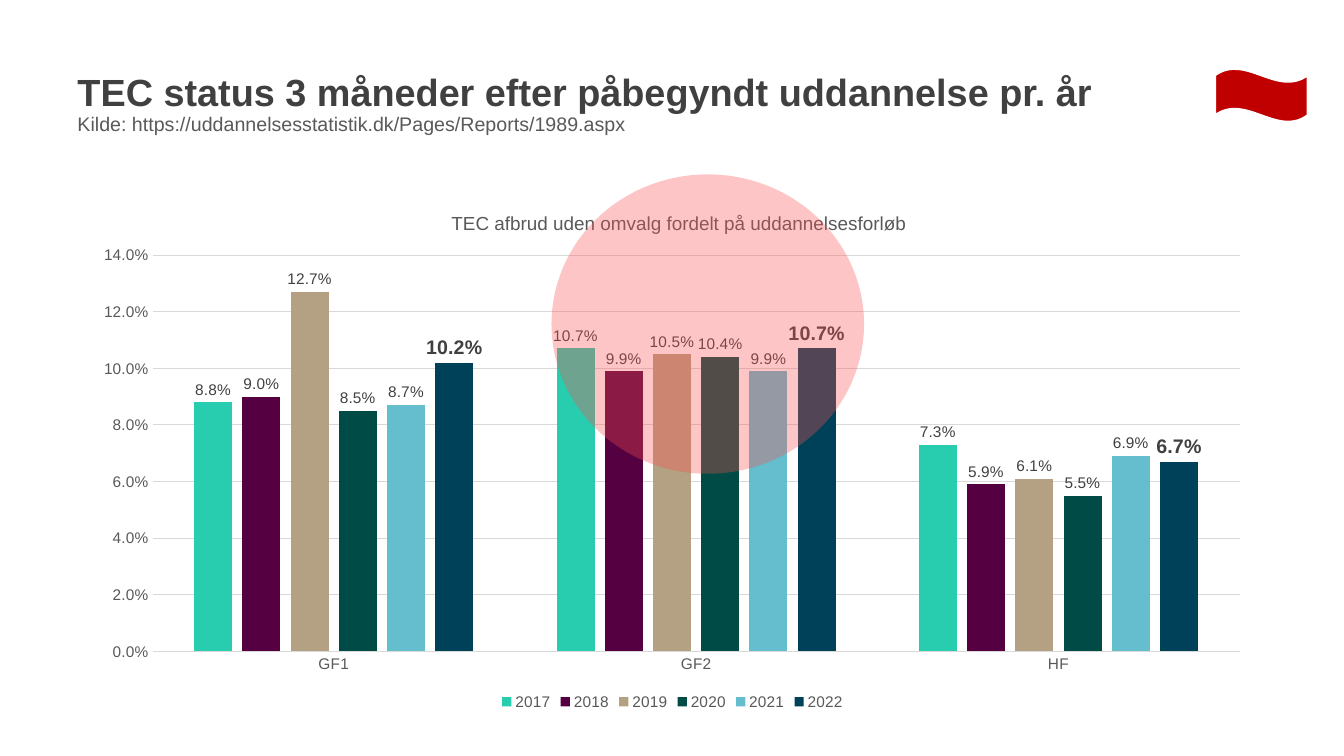
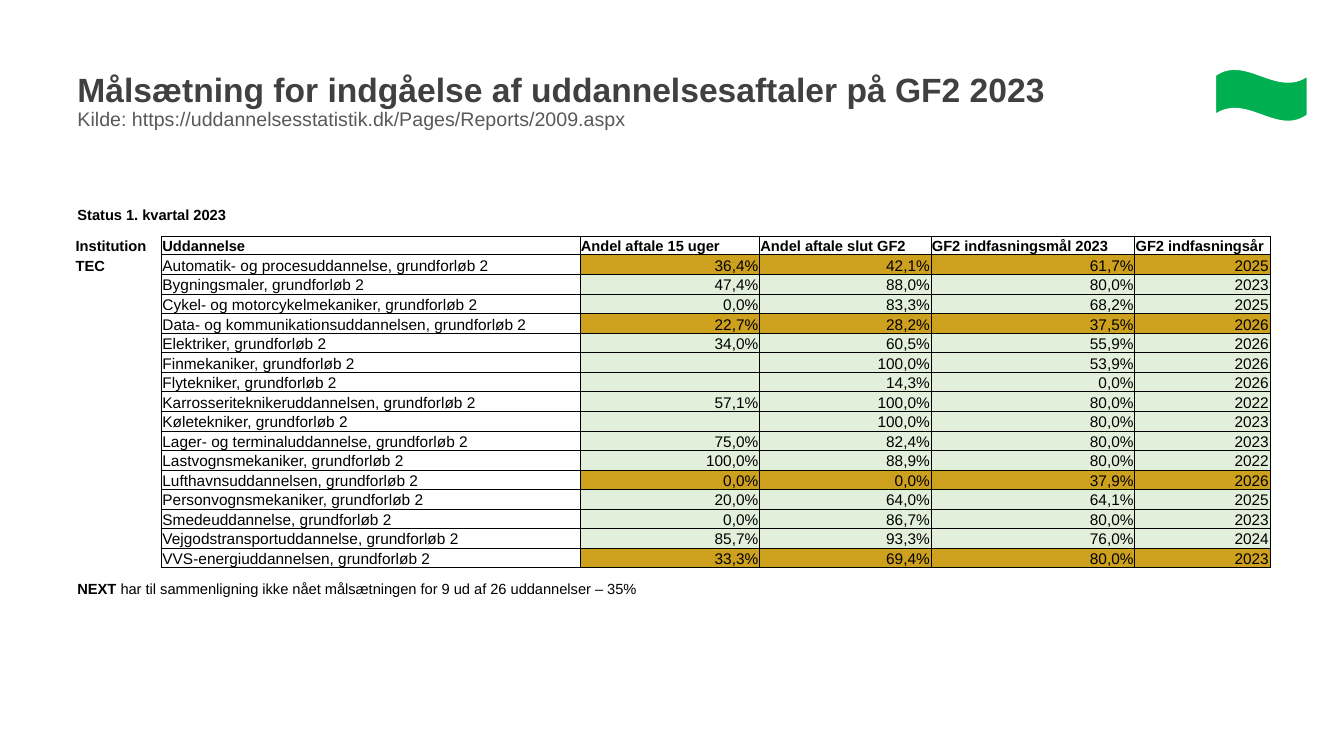
from dataclasses import dataclass

from lxml.etree import SubElement
from pptx import Presentation
from pptx.chart.data import CategoryChartData as ChartData
from pptx.dml.color import RGBColor as Rgb
from pptx.enum.chart import XL_CHART_TYPE as ChartType
from pptx.enum.chart import XL_LABEL_POSITION as LabelPosition
from pptx.enum.chart import XL_LEGEND_POSITION as LegendPosition
from pptx.enum.chart import XL_TICK_MARK as TickMark
from pptx.enum.shapes import MSO_SHAPE as Shape
from pptx.enum.text import MSO_ANCHOR as Anchor
from pptx.enum.text import PP_ALIGN as Align
from pptx.oxml import parse_xml
from pptx.oxml.ns import nsdecls, qn
from pptx.util import Inches, Pt


@dataclass(frozen=True)
class Theme:
    font: str = "Arial"
    heading: str = "404040"
    muted: str = "595959"
    text: str = "000000"
    white: str = "FFFFFF"
    grid: str = "D9D9D9"
    red: str = "C00000"
    green: str = "00B050"
    highlight: str = "FA5050"
    missed: str = "CDA01E"
    reached: str = "E2EFDA"
    years: tuple = ("28CDAF", "550041", "B4A082", "004B46", "64BECD", "00415A")
    source_size: float = 14
    chart_title_size: float = 13.5
    latest_size: float = 14
    body_size: float = 11
    note_size: float = 10.5


THEME = Theme()


@dataclass(frozen=True)
class Box:
    left: float
    top: float
    width: float
    height: float

    def inside(self, left, top, width, height):
        """Box inside this one, given in percent of its size."""
        return Box(self.left + self.width * left / 100,
                   self.top + self.height * top / 100,
                   self.width * width / 100, self.height * height / 100)

    def place(self):
        return [Inches(v) for v in (self.left, self.top, self.width, self.height)]


SLIDE = Box(0, 0, 13.33, 7.5)
TITLE_BOX = SLIDE.inside(5.03, 9.07, 88.9, 15.6)
FLAG_BOX = SLIDE.inside(90.4, 9.07, 6.9, 7.07)
CHART_BOX = SLIDE.inside(6.08, 24.67, 87.92, 69.87)
STATUS_BOX = SLIDE.inside(5.03, 26.53, 89.45, 53.2)

DROPOUT = {
    "2017": (0.088, 0.107, 0.073),
    "2018": (0.09, 0.099, 0.059),
    "2019": (0.127, 0.105, 0.061),
    "2020": (0.085, 0.104, 0.055),
    "2021": (0.087, 0.099, 0.069),
    "2022": (0.102, 0.107, 0.067),
}

HEADERS = ("Institution", "Uddannelse", "Andel aftale 15 uger",
           "Andel aftale slut GF2", "GF2 indfasningsmål 2023", "GF2 indfasningsår")
COLUMN_SHARES = (7.26, 35.02, 15.02, 14.35, 17.05, 11.31)
# Programme, share at 15 weeks, share at end of GF2, goal, phase-in year
PROGRAMMES = (
    ("Automatik- og procesuddannelse", 36.4, 42.1, 61.7, 2025),
    ("Bygningsmaler", 47.4, 88.0, 80.0, 2023),
    ("Cykel- og motorcykelmekaniker", 0.0, 83.3, 68.2, 2025),
    ("Data- og kommunikationsuddannelsen", 22.7, 28.2, 37.5, 2026),
    ("Elektriker", 34.0, 60.5, 55.9, 2026),
    ("Finmekaniker", None, 100.0, 53.9, 2026),
    ("Flytekniker", None, 14.3, 0.0, 2026),
    ("Karrosseriteknikeruddannelsen", 57.1, 100.0, 80.0, 2022),
    ("Køletekniker", None, 100.0, 80.0, 2023),
    ("Lager- og terminaluddannelse", 75.0, 82.4, 80.0, 2023),
    ("Lastvognsmekaniker", 100.0, 88.9, 80.0, 2022),
    ("Lufthavnsuddannelsen", 0.0, 0.0, 37.9, 2026),
    ("Personvognsmekaniker", 20.0, 64.0, 64.1, 2025),
    ("Smedeuddannelse", 0.0, 86.7, 80.0, 2023),
    ("Vejgodstransportuddannelse", 85.7, 93.3, 76.0, 2024),
    ("VVS-energiuddannelsen", 33.3, 69.4, 80.0, 2023),
)
GOAL_TOLERANCE = 0.5  # percentage points
NO_TABLE_STYLE = "{2D5ABB26-0587-4C30-8999-92F81FD0307C}"


def style(font, size, color, bold=False):
    font.name, font.size, font.bold = THEME.font, Pt(size), bold
    font.color.rgb = Rgb.from_string(color)


def add_span(para, text, size, color, bold=False):
    span = para.add_run()
    span.text = text
    style(span.font, size, color, bold)


def add_text(page, box):
    frame = page.shapes.add_textbox(*box.place()).text_frame
    frame.word_wrap = True
    return frame.paragraphs[0]


def add_figure(page, kind, box, color):
    figure = page.shapes.add_shape(kind, *box.place())
    figure.shadow.inherit = False
    figure.fill.solid()
    figure.fill.fore_color.rgb = Rgb.from_string(color)
    figure.line.fill.background()
    return figure


def add_header(page, title, size, source, flag_color):
    # Title with its source line
    para = add_text(page, TITLE_BOX)
    para.line_spacing = 0.9
    add_span(para, title, size, THEME.heading, True)
    para.add_line_break()
    add_span(para, source, THEME.source_size, THEME.muted)
    # Status flag
    flag = add_figure(page, Shape.WAVE, FLAG_BOX, flag_color)
    flag.line.color.rgb = Rgb.from_string(THEME.white)
    flag.line.width = Pt(1.5)


def set_layout(parent, index, inner=False, **shares):
    """Fix the place of a chart element, in shares of the chart."""
    old = parent.find(qn("c:layout"))
    if old is not None:
        parent.remove(old)
    layout = parse_xml(f"<c:layout {nsdecls('c')}><c:manualLayout/></c:layout>")
    values = {"layoutTarget": "inner"} if inner else {}
    values.update(xMode="edge", yMode="edge", **shares)
    for name, value in values.items():
        SubElement(layout[0], qn(f"c:{name}")).set("val", str(value))
    parent.insert(index, layout)


def style_axis(axis):
    axis.major_tick_mark = axis.minor_tick_mark = TickMark.NONE
    style(axis.tick_labels.font, THEME.body_size, THEME.muted)


def style_line(line):
    line.color.rgb = Rgb.from_string(THEME.grid)
    line.width = Pt(0.75)


def add_dropout_chart(page, box):
    data = ChartData(number_format="0.0%")
    data.categories = ("GF1", "GF2", "HF")
    for year, values in DROPOUT.items():
        data.add_series(year, values)
    chart = page.shapes.add_chart(
        ChartType.COLUMN_CLUSTERED, *box.place(), data).chart
    style(chart.font, THEME.body_size, THEME.text)

    # Chart title and legend
    para = chart.chart_title.text_frame.paragraphs[0]
    add_span(para, "TEC afbrud uden omvalg fordelt på uddannelsesforløb",
             THEME.chart_title_size, THEME.muted)
    chart_xml = chart.element.find(qn("c:chart"))
    set_layout(chart_xml.find(qn("c:title")), 1, x=0.31, y=0.04)
    set_layout(chart_xml.find(qn("c:plotArea")), 0, inner=True,
               x=0.06, y=0.13, w=0.92, h=0.75)
    chart.has_legend = True
    chart.legend.position = LegendPosition.BOTTOM
    chart.legend.include_in_layout = False
    style(chart.legend.font, THEME.body_size, THEME.muted)

    # Axes
    style_axis(chart.category_axis)
    style_line(chart.category_axis.format.line)
    scale = chart.value_axis
    style_axis(scale)
    scale.minimum_scale, scale.maximum_scale, scale.major_unit = 0, 0.14, 0.02
    scale.tick_labels.number_format = "0.0%"
    scale.tick_labels.number_format_is_linked = False
    scale.format.line.fill.background()
    style_line(scale.major_gridlines.format.line)

    # Columns, with the latest year stressed
    plot = chart.plots[0]
    plot.gap_width, plot.overlap, plot.vary_by_categories = 219, -27, False
    for series, color in zip(plot.series, THEME.years):
        series.format.fill.solid()
        series.format.fill.fore_color.rgb = Rgb.from_string(color)
        latest = color == THEME.years[-1]
        labels = series.data_labels
        labels.show_value = True
        labels.position = LabelPosition.OUTSIDE_END
        labels.number_format = "0.0%"
        labels.number_format_is_linked = False
        style(labels.font, THEME.latest_size if latest else THEME.body_size,
              THEME.heading, latest)

    # Translucent highlight over GF2
    circle = add_figure(page, Shape.OVAL, box.inside(39.76, -2.29, 26.45, 56.68),
                        THEME.highlight)
    color = circle.element.spPr.find(qn("a:solidFill"))[0]
    SubElement(color, qn("a:alpha")).set("val", "33000")


def add_borders(cell, sides):
    properties = cell._tc.get_or_add_tcPr()
    for side in sides:
        properties.append(parse_xml(
            f'<a:ln{side} {nsdecls("a")} w="6350"><a:solidFill>'
            f'<a:srgbClr val="{THEME.text}"/></a:solidFill></a:ln{side}>'))


def fill_cell(cell, text, size, bold, sides, align, color):
    cell.margin_left = cell.margin_right = cell.margin_top = Inches(0.01)
    cell.margin_bottom = 0
    cell.vertical_anchor = Anchor.BOTTOM
    add_borders(cell, sides)
    if color:
        cell.fill.solid()
        cell.fill.fore_color.rgb = Rgb.from_string(color)
    else:
        cell.fill.background()
    para = cell.text_frame.paragraphs[0]
    para.alignment = align
    if text:
        add_span(para, text, size, THEME.text, bold)
    else:
        SubElement(para._p, qn("a:endParaRPr")).set("sz", str(size * 100))


def percent(value):
    return "" if value is None else f"{value:.1f}%".replace(".", ",")


def add_goal_table(page, box):
    rows = [HEADERS]
    fills = [None]
    for number, (name, early, final, goal, year) in enumerate(PROGRAMMES):
        rows.append(("TEC" if number == 0 else "", f"{name}, grundforløb 2",
                     percent(early), percent(final), percent(goal), str(year)))
        missed = goal - final > GOAL_TOLERANCE
        fills.append(THEME.missed if missed else THEME.reached)

    frame = page.shapes.add_table(len(rows), len(HEADERS), *box.place())
    table = frame.table
    table.first_row = table.horz_banding = False
    table._tbl.tblPr.find(qn("a:tableStyleId")).text = NO_TABLE_STYLE
    for column, share in zip(table.columns, COLUMN_SHARES):
        column.width = Inches(box.width * share / 100)
    for r, (texts, color) in enumerate(zip(rows, fills)):
        table.rows[r].height = Inches(0.2 if r == 1 else 0.18)
        for c, text in enumerate(texts):
            heading = r == 0 or c == 0
            value = r > 0 and c > 1
            fill_cell(table.cell(r, c), text,
                      THEME.note_size if heading and text else THEME.body_size,
                      heading, "LRTB" if c else "R",
                      Align.RIGHT if value else Align.LEFT,
                      color if value else None)


def add_goal_status(page, box):
    status = add_text(page, box.inside(0, 0, 59.48, 7.02))
    add_span(status, "Status 1. kvartal 2023", THEME.note_size, THEME.text, True)
    add_goal_table(page, box.inside(0.59, 8.77, 99.41, 77.19))
    note = add_text(page, box.inside(0, 92.98, 93.54, 7.02))
    add_span(note, "NEXT", THEME.note_size, THEME.text, True)
    add_span(note, " har til sammenligning ikke nået målsætningen for 9 ud af "
             "26 uddannelser – 35%", THEME.note_size, THEME.text)


def main():
    deck = Presentation()
    deck.slide_width, deck.slide_height = SLIDE.place()[2:]
    blank = deck.slide_layouts[6]

    page = deck.slides.add_slide(blank)
    add_header(page, "TEC status 3 måneder efter påbegyndt uddannelse pr. år", 27,
               "Kilde: https://uddannelsesstatistik.dk/Pages/Reports/1989.aspx",
               THEME.red)
    add_dropout_chart(page, CHART_BOX)

    page = deck.slides.add_slide(blank)
    add_header(page, "Målsætning for indgåelse af uddannelsesaftaler på GF2 2023", 24,
               "Kilde: https://uddannelsesstatistik.dk/Pages/Reports/2009.aspx",
               THEME.green)
    add_goal_status(page, STATUS_BOX)

    deck.save("out.pptx")


if __name__ == "__main__":
    main()
